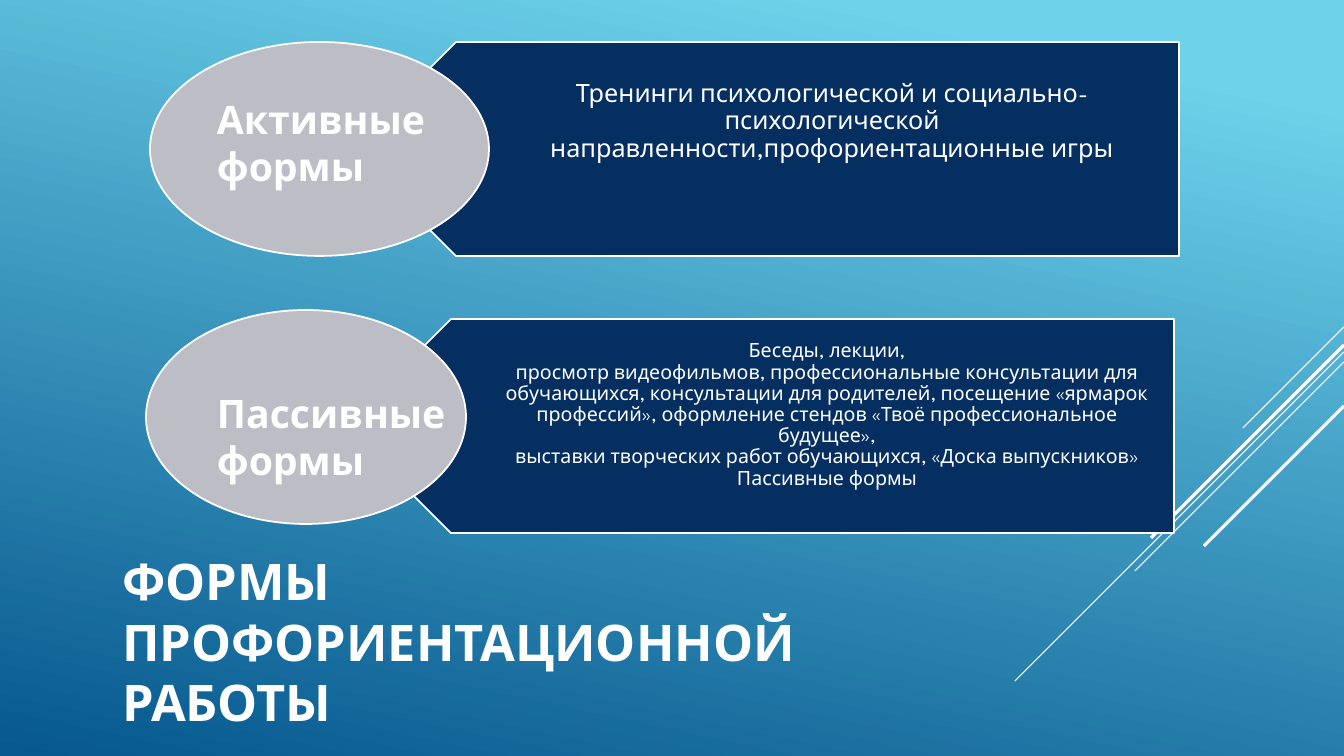
from lxml.etree import SubElement
from pptx import Presentation
from pptx.dml.color import RGBColor
from pptx.enum.shapes import MSO_CONNECTOR, MSO_SHAPE
from pptx.enum.text import MSO_ANCHOR, MSO_AUTO_SIZE, PP_ALIGN
from pptx.oxml.ns import qn
from pptx.util import Emu, Pt

SLIDE_WIDTH, SLIDE_HEIGHT = 1344, 756
FONT = "League Spartan"
WHITE = RGBColor(0xFF, 0xFF, 0xFF)
NAVY = RGBColor(0x05, 0x2F, 0x61)
SILVER = RGBColor(0xBD, 0xBE, 0xC5)
SKY = RGBColor(0x6E, 0xD2, 0xEB)
OCEAN = RGBColor(0x06, 0x58, 0x8E)

TITLE = "ФОРМЫ ПРОФОРИЕНТАЦИОННОЙ РАБОТЫ"
ACTIVE_TEXT = [
    "Тренинги психологической и социально-психологической "
    "направленности,профориентационные игры",
]
PASSIVE_TEXT = [
    "Беседы, лекции,",
    "просмотр видеофильмов, профессиональные консультации для",
    "обучающихся, консультации для родителей, посещение «ярмарок",
    "профессий», оформление стендов «Твоё профессиональное будущее»,",
    "выставки творческих работ обучающихся, «Доска выпускников»",
    "Пассивные формы",
]


def px(length):
    """Turn slide pixels into EMU."""
    return Emu(round(length * 914400 / 100.8))


def write_text(frame, lines, size, bold=False, align=PP_ALIGN.LEFT, spacing=1.0):
    """Write each line as a paragraph with one white run."""
    frame.word_wrap = True
    frame.auto_size = MSO_AUTO_SIZE.NONE
    for index, line in enumerate(lines):
        paragraph = frame.add_paragraph() if index else frame.paragraphs[0]
        paragraph.alignment = align
        paragraph.line_spacing = spacing
        paragraph.space_before = paragraph.space_after = Pt(0)
        run = paragraph.add_run()
        run.text = line
        run.font.name = FONT
        run.font.size = Pt(size)
        run.font.bold = bold
        run.font.color.rgb = WHITE


def add_panel(slide, kind, box, color):
    """Add a filled preset shape with a white outline."""
    shape = slide.shapes.add_shape(kind, *map(px, box))
    shape.shadow.inherit = False
    shape.fill.solid()
    shape.fill.fore_color.rgb = color
    shape.line.color.rgb = WHITE
    shape.line.width = Pt(1.25)
    return shape


def add_background(slide):
    """Fill the slide with the blue gradient."""
    fill = slide.background.fill
    fill.gradient()
    fill.gradient_angle = 258
    for stop, position, color in zip(fill.gradient_stops, (0.1, 1), (SKY, OCEAN)):
        stop.position = position
        stop.color.rgb = color


def add_rays(slide, right):
    """Draw the diagonal lines that run down and left from the right edge."""
    rays = [(327, 101, 0.75), (352, 329, 0.75), (362, 209, 0.75),
            (345, 193, 2.25), (406, 140, 2.25)]
    for top, reach, width in rays:
        ray = slide.shapes.add_connector(
            MSO_CONNECTOR.STRAIGHT, px(right), px(top), px(right - reach), px(top + reach))
        ray.line.color.rgb = WHITE
        ray.line.width = Pt(width)
        SubElement(ray._element.spPr, qn("a:effectLst"))


def add_title(slide, left, top, width, height):
    """Place and format the title placeholder."""
    title = slide.shapes.title
    title.left, title.top, title.width, title.height = map(px, (left, top, width, height))
    frame = title.text_frame
    frame.vertical_anchor = MSO_ANCHOR.MIDDLE
    frame.margin_right = px(20)
    write_text(frame, [TITLE], 36, bold=True)


def add_form(slide, left, top, oval, lines, size, padding):
    """Draw one arrow panel, its text and the oval on its tip."""
    width, height, indent = 830, 214, 53
    arrow = add_panel(slide, MSO_SHAPE.PENTAGON, (left, top, width, height), NAVY)
    arrow.rotation = 180
    text_box = slide.shapes.add_textbox(
        px(left + indent), px(top), px(width - indent), px(height))
    frame = text_box.text_frame
    frame.margin_left, frame.margin_right = px(95), px(12)
    frame.margin_top, frame.margin_bottom = px(padding), px(6)
    write_text(frame, lines, size, align=PP_ALIGN.CENTER, spacing=0.9)
    oval_left, oval_top, oval_width = oval
    add_panel(slide, MSO_SHAPE.OVAL, (oval_left, oval_top, oval_width, height), SILVER)


def add_label(slide, left, top, name):
    """Write the bold two-line name of a form over its oval."""
    label = slide.shapes.add_textbox(px(left), px(top), px(259), px(110))
    write_text(label.text_frame, [name, "формы"], 28, bold=True)


def main():
    """Build the slide and save it."""
    presentation = Presentation()
    presentation.slide_width = px(SLIDE_WIDTH)
    presentation.slide_height = px(SLIDE_HEIGHT)
    slide = presentation.slides.add_slide(presentation.slide_layouts[5])
    add_background(slide)
    add_rays(slide, SLIDE_WIDTH)
    add_title(slide, 112, 563, 905, 156)
    add_form(slide, 349, 42, (150, 42, 339), ACTIVE_TEXT, 18, 39)
    add_form(slide, 344, 319, (146, 310, 320), PASSIVE_TEXT, 14, 22)
    add_label(slide, 207, 90, "Активные")
    add_label(slide, 207, 384, "Пассивные")
    presentation.save("out.pptx")


if __name__ == "__main__":
    main()
